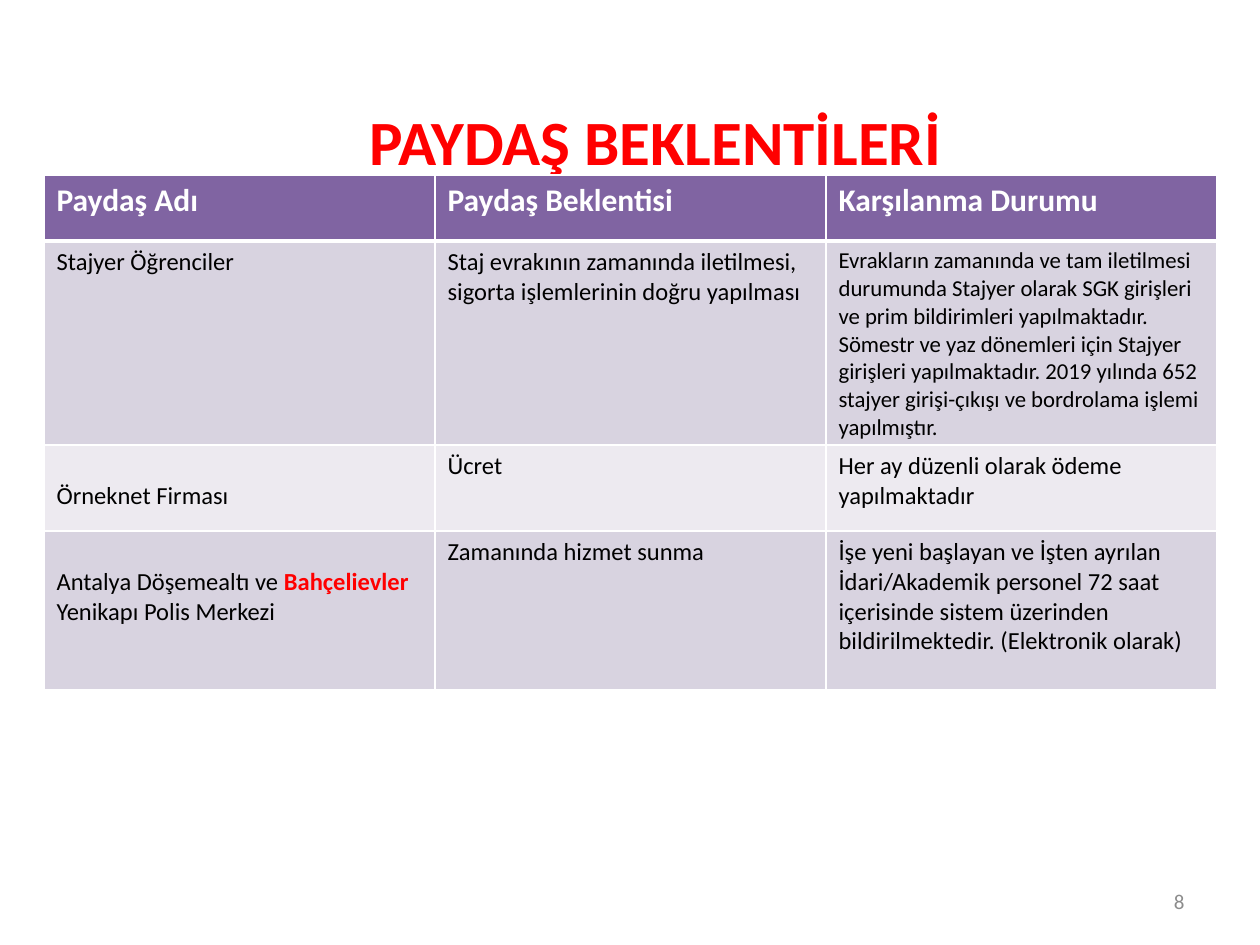
"""Build the stakeholder expectations slide."""
from dataclasses import dataclass

from lxml import etree
from pptx import Presentation
from pptx import util as u
from pptx.dml.color import RGBColor
from pptx.enum import text
from pptx.oxml.ns import qn


@dataclass(frozen=True)
class Theme:
    font: str = "Calibri"
    white: str = "FFFFFF"
    black: str = "000000"
    red: str = "FF0000"
    grey: str = "8C8C8C"
    head: str = "8064A2"
    bands: tuple = ("D8D3E0", "EDEAF0")
    title: int = 36
    label: int = 18
    body: int = 14
    dense: int = 13
    note: int = 12
    thin: int = 1
    thick: int = 3


class Deck:
    def __init__(self, theme, wide, high):
        self.theme = theme
        self.prs = Presentation()
        self.prs.slide_width, self.prs.slide_height = self.px(wide), self.px(high)
        self.slide = self.prs.slides.add_slide(self.prs.slide_layouts[5])

    def px(self, n):
        return u.Emu(round(n * 914400 / 126))

    def style(self, run, size, color, bold=False):
        font = run.font
        font.name, font.size, font.bold = self.theme.font, u.Pt(size), bold
        font.color.rgb = RGBColor.from_string(color)

    def title(self, words, *box):
        shape = self.slide.shapes.title
        shape.left, shape.top, shape.width, shape.height = map(self.px, box)
        frame = shape.text_frame
        frame.text = words
        frame.word_wrap = True
        frame.auto_size = text.MSO_AUTO_SIZE.SHAPE_TO_FIT_TEXT
        frame.vertical_anchor = text.MSO_ANCHOR.TOP
        para = frame.paragraphs[0]
        para.alignment = text.PP_ALIGN.CENTER
        self.style(para.runs[0], self.theme.title, self.theme.red, True)

    def number(self, words, *box):
        frame = self.slide.shapes.add_textbox(*map(self.px, box)).text_frame
        frame.text = words
        frame.word_wrap = True
        frame.vertical_anchor = text.MSO_ANCHOR.MIDDLE
        para = frame.paragraphs[0]
        para.alignment = text.PP_ALIGN.RIGHT
        self.style(para.runs[0], self.theme.note, self.theme.grey)

    def border(self, cell, row):
        thick = {0: "lnB", 1: "lnT"}.get(row)
        props = cell._tc.get_or_add_tcPr()
        for side in ("lnL", "lnR", "lnT", "lnB"):
            width = self.theme.thick if side == thick else self.theme.thin
            line = etree.SubElement(props, qn("a:" + side), w=str(u.Pt(width)))
            fill = etree.SubElement(line, qn("a:solidFill"))
            etree.SubElement(fill, qn("a:srgbClr"), val=self.theme.white)

    def cell(self, cell, row, words, size, accent):
        theme = self.theme
        self.border(cell, row)
        cell.fill.solid()
        back = theme.bands[(row - 1) % 2] if row else theme.head
        cell.fill.fore_color.rgb = RGBColor.from_string(back)
        para = cell.text_frame.paragraphs[0]
        before, found, after = words.partition(accent) if accent else (words, "", "")
        for part in filter(None, (before, found, after)):
            run = para.add_run()
            run.text = part
            color = theme.black if row else theme.white
            marked = part == found
            self.style(run, size, theme.red if marked else color, marked or not row)

    def table(self, rows, left, top, wide, highs, sizes, drops, accent):
        shape = self.slide.shapes.add_table(
            len(rows), len(rows[0]), *map(self.px, (left, top, wide, sum(highs))))
        grid = shape.table
        for col in grid.columns:
            col.width = self.px(wide // len(rows[0]))
        for r, row in enumerate(rows):
            grid.rows[r].height = self.px(highs[r])
            for c, words in enumerate(row):
                size = sizes.get((r, c), self.theme.body if r else self.theme.label)
                cell = grid.cell(r, c)
                self.cell(cell, r, words, size, accent if accent in words else "")
                if (r, c) in drops:
                    cell.margin_top = self.px(drops[r, c])

    def save(self):
        self.prs.save("out.pptx")


ROWS = [
    ["Paydaş Adı", "Paydaş Beklentisi", "Karşılanma Durumu"],
    ["Stajyer Öğrenciler",
     "Staj evrakının zamanında iletilmesi, sigorta işlemlerinin doğru yapılması",
     "Evrakların zamanında ve tam iletilmesi durumunda Stajyer olarak SGK girişleri "
     "ve prim bildirimleri yapılmaktadır. Sömestr ve yaz dönemleri için Stajyer "
     "girişleri yapılmaktadır. 2019 yılında 652 stajyer girişi-çıkışı ve bordrolama "
     "işlemi yapılmıştır."],
    ["Örneknet Firması", "Ücret", "Her ay düzenli olarak ödeme yapılmaktadır"],
    ["Antalya Döşemealtı ve Bahçelievler Yenikapı Polis Merkezi",
     "Zamanında hizmet sunma",
     "İşe yeni başlayan ve İşten ayrılan İdari/Akademik personel 72 saat içerisinde "
     "sistem üzerinden bildirilmektedir. (Elektronik olarak)"],
]


def main():
    theme = Theme()
    deck = Deck(theme, 1260, 945)
    deck.title("PAYDAŞ BEKLENTİLERİ", 174, 96, 963, 89)
    deck.number("8", 903, 876, 294, 50)
    deck.table(ROWS, 44, 175, 1173, (66, 203, 86, 159), {(1, 2): theme.dense},
               {(2, 0): 36, (3, 0): 36}, "Bahçelievler")
    deck.save()


if __name__ == "__main__":
    main()
